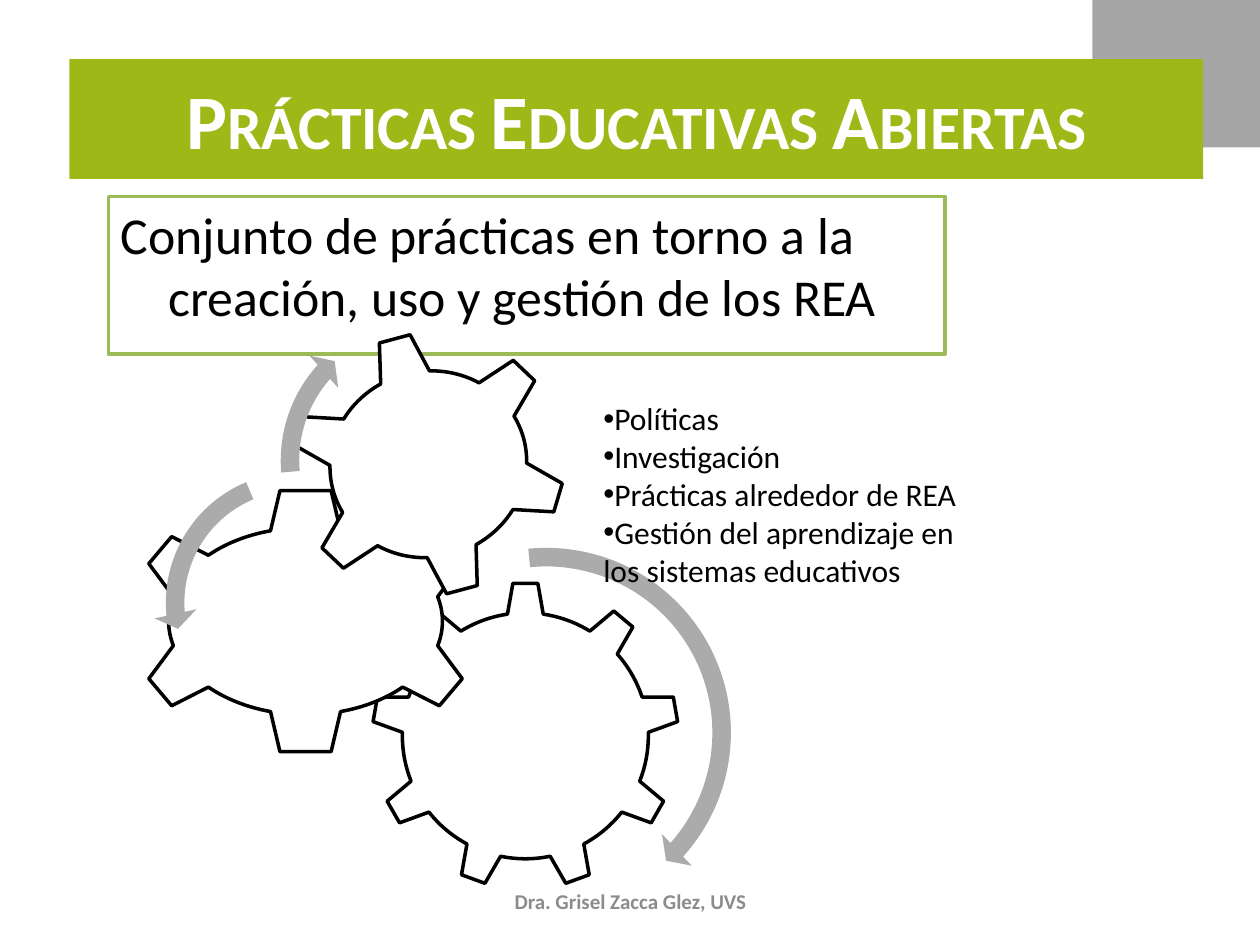
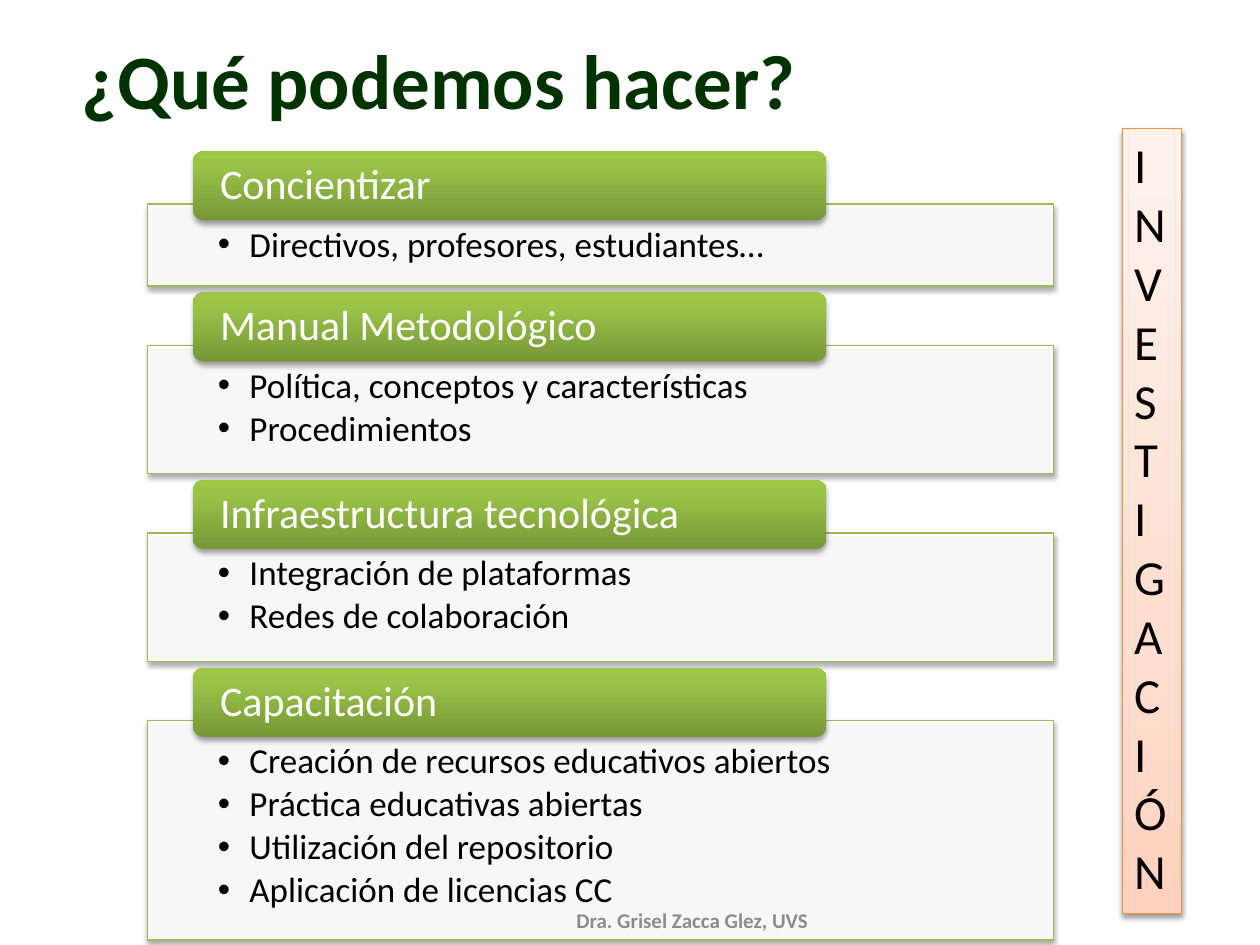
from dataclasses import dataclass, field
from typing import Any, NamedTuple

from lxml.etree import SubElement
from pptx import Presentation
from pptx.dml.color import RGBColor
from pptx.enum.shapes import MSO_SHAPE
from pptx.enum.text import MSO_ANCHOR, PP_ALIGN
from pptx.oxml.ns import qn
from pptx.util import Inches, Pt

FONT = "Calibri"
WHITE = RGBColor(0xFF, 0xFF, 0xFF)
BLACK = RGBColor(0x00, 0x00, 0x00)
DARK_GREEN = RGBColor(0x00, 0x33, 0x00)
BAND_GREEN = RGBColor(0x9E, 0xB9, 0x17)
LINE_GREEN = RGBColor(0x9B, 0xBB, 0x59)
LINE_ORANGE = RGBColor(0xF6, 0x92, 0x40)
CORNER_GRAY = RGBColor(0xA6, 0xA6, 0xA6)
ARROW_GRAY = RGBColor(0xAB, 0xAB, 0xAB)
FOOTER_GRAY = RGBColor(0x8C, 0x8C, 0x8C)
GREEN_STOPS = (
    (0, RGBColor(0x77, 0x97, 0x37)),
    (80, RGBColor(0x9B, 0xC3, 0x48)),
    (100, RGBColor(0x9D, 0xC7, 0x46)),
)
PEACH_STOPS = (
    (0, RGBColor(0xFF, 0xD2, 0xBD)),
    (35, RGBColor(0xFF, 0xDE, 0xD0)),
    (100, RGBColor(0xFF, 0xF2, 0xED)),
)


class Box(NamedTuple):
    left: float
    top: float
    width: float
    height: float

    def lengths(self) -> list:
        return [Inches(value) for value in self]


@dataclass
class TextStyle:
    size: float
    color: RGBColor = BLACK
    bold: bool = False
    small_caps: bool = False
    bullet: bool = False
    indent: float = 0
    anchor: Any = MSO_ANCHOR.TOP
    margins: tuple = (0.1, 0.05, 0.1, 0.05)
    paragraph: dict = field(default_factory=dict)


@dataclass
class Look:
    fill: Any = None
    opacity: int = 100
    stops: tuple = ()
    line: Any = None
    line_width: float = 0.75
    shadow_opacity: int = 0
    shadow_distance: float = 1.8


class Figure(NamedTuple):
    kind: Any
    box: Box
    look: Look
    rotation: float = 0
    adjustments: tuple = ()


class Action(NamedTuple):
    heading: str
    items: tuple
    height: float


CENTERED = {"alignment": PP_ALIGN.CENTER}
TITLE = TextStyle(44, DARK_GREEN, bold=True, anchor=MSO_ANCHOR.MIDDLE)
BAND_TITLE = TextStyle(44, WHITE, bold=True, small_caps=True, anchor=MSO_ANCHOR.MIDDLE, paragraph=CENTERED)
FOOTER = TextStyle(12, FOOTER_GRAY, bold=True, anchor=MSO_ANCHOR.MIDDLE, paragraph=CENTERED)
DEFINITION = TextStyle(29.6, indent=0.38)
TOPICS = TextStyle(18, bullet=True)
HEADING = TextStyle(24, WHITE, anchor=MSO_ANCHOR.MIDDLE, margins=(0.19, 0, 0.19, 0),
                    paragraph={"line_spacing": 0.9})
DETAILS = TextStyle(20, bullet=True, indent=0.25, margins=(0.56, 0.18, 0.56, 0.16),
                    paragraph={"line_spacing": 0.9, "space_after": Pt(3)})
RESEARCH = TextStyle(28)

GEAR_LOOK = Look(WHITE, line=BLACK, line_width=2)
ARROW_LOOK = Look(ARROW_GRAY)
PANEL_LOOK = Look(WHITE, opacity=90, line=LINE_GREEN, shadow_opacity=35)
HEADING_LOOK = Look(stops=GREEN_STOPS, shadow_opacity=35)
RESEARCH_LOOK = Look(stops=PEACH_STOPS, line=LINE_ORANGE, shadow_opacity=38, shadow_distance=1.6)

FIGURES = (
    Figure(MSO_SHAPE.GEAR_9, Box(2.95, 4.62, 2.44, 2.44), GEAR_LOOK),
    Figure(MSO_SHAPE.GEAR_6, Box(1.02, 3.87, 2.81, 2.12), GEAR_LOOK),
    Figure(MSO_SHAPE.GEAR_6, Box(2.3, 2.63, 2.2, 2.11), GEAR_LOOK, rotation=345),
    Figure(MSO_SHAPE.CIRCULAR_ARROW, Box(2.77, 4.25, 3.13, 3.13), ARROW_LOOK,
           adjustments=(0.047, 2.99, 25.131, 158.679, 0.055)),
    Figure(MSO_SHAPE.LEFT_CIRCULAR_ARROW, Box(1.22, 3.65, 2.27, 2.27), ARROW_LOOK,
           adjustments=(0.065, 4.3, 104.891, 148.378, 0.075)),
    Figure(MSO_SHAPE.CIRCULAR_ARROW, Box(2.13, 2.43, 2.45, 2.45), ARROW_LOOK,
           adjustments=(0.06, 3.941, 133.138, 105.082, 0.07)),
)
ACTIONS = (
    Action("Concientizar", ("Directivos, profesores, estudiantes…",), 0.65),
    Action("Manual Metodológico", ("Política, conceptos y características", "Procedimientos"), 1.02),
    Action("Infraestructura tecnológica", ("Integración de plataformas", "Redes de colaboración"), 1.02),
    Action("Capacitación", (
        "Creación de recursos educativos abiertos",
        "Práctica educativas abiertas",
        "Utilización del repositorio",
        "Aplicación de licencias CC",
    ), 1.74),
)


def set_values(target: Any, values: dict) -> None:
    for name, value in values.items():
        setattr(target, name, value)


def write_text(shape: Any, lines: tuple, style: TextStyle) -> None:
    frame = shape.text_frame
    left, top, right, bottom = (Inches(margin) for margin in style.margins)
    set_values(frame, {
        "text": "\n".join(lines), "word_wrap": True, "vertical_anchor": style.anchor,
        "margin_left": left, "margin_top": top, "margin_right": right, "margin_bottom": bottom,
    })
    for paragraph in frame.paragraphs:
        set_values(paragraph, {"alignment": PP_ALIGN.LEFT, **style.paragraph})
        properties = paragraph._p.get_or_add_pPr()
        if style.indent:
            properties.set("marL", str(Inches(style.indent)))
            properties.set("indent", str(-Inches(style.indent)))
        if style.bullet:
            SubElement(properties, qn("a:buFont")).set("typeface", "Arial")
            SubElement(properties, qn("a:buChar")).set("char", "•")
        for run in paragraph.runs:
            set_values(run.font, {"name": FONT, "size": Pt(style.size), "bold": style.bold})
            run.font.color.rgb = style.color
            if style.small_caps:
                run._r.get_or_add_rPr().set("cap", "small")


def add_text(slide: Any, box: Box, lines: tuple, style: TextStyle) -> None:
    write_text(slide.shapes.add_textbox(*box.lengths()), lines, style)


def add_color(parent: Any, color: RGBColor, opacity: int = 100) -> None:
    element = SubElement(parent, qn("a:srgbClr"), val=str(color))
    if opacity < 100:
        SubElement(element, qn("a:alpha"), val=str(opacity * 1000))


def apply_fill(shape: Any, look: Look) -> None:
    if look.stops:
        shape.fill.gradient()
        shape.fill.gradient_angle = 90
        stop_list = shape._element.spPr.find(qn("a:gradFill")).find(qn("a:gsLst"))
        for stop in list(stop_list):
            stop_list.remove(stop)
        for position, color in look.stops:
            add_color(SubElement(stop_list, qn("a:gs"), pos=str(position * 1000)), color)
        return
    shape.fill.solid()
    shape.fill.fore_color.rgb = look.fill
    if look.opacity < 100:
        solid = shape._element.spPr.find(qn("a:solidFill"))
        solid.remove(solid[0])
        add_color(solid, look.fill, look.opacity)


def add_figure(slide: Any, figure: Figure) -> Any:
    look = figure.look
    shape = slide.shapes.add_shape(figure.kind, *figure.box.lengths())
    shape.rotation = figure.rotation
    for index, value in enumerate(figure.adjustments):
        shape.adjustments[index] = value
    apply_fill(shape, look)
    if look.line is None:
        shape.line.fill.background()
    else:
        shape.line.color.rgb = look.line
        shape.line.width = Pt(look.line_width)
    shape.shadow.inherit = False
    if look.shadow_opacity:
        effects = shape._element.spPr.find(qn("a:effectLst"))
        shadow = SubElement(effects, qn("a:outerShdw"), blurRad=str(Pt(3.1)),
                            dist=str(Pt(look.shadow_distance)), dir="5400000", rotWithShape="0")
        add_color(shadow, BLACK, look.shadow_opacity)
    return shape


def add_rectangle(slide: Any, box: Box, look: Look) -> Any:
    return add_figure(slide, Figure(MSO_SHAPE.RECTANGLE, box, look))


def add_footer(slide: Any, left: float, top: float) -> None:
    add_text(slide, Box(left, top, 3.17, 0.4), ("Dra. Grisel Zacca Glez, UVS",), FOOTER)


def build_practices(slide: Any) -> None:
    definition = add_rectangle(slide, Box(0.86, 1.56, 6.64, 1.25), Look(WHITE, line=LINE_GREEN, line_width=2))
    write_text(definition, ("Conjunto de prácticas en torno a la creación, uso y gestión de los REA",), DEFINITION)
    for figure in FIGURES:
        add_figure(slide, figure)
    add_text(slide, Box(4.69, 3.12, 3.2, 1.92), (
        "Políticas",
        "Investigación",
        "Prácticas alrededor de REA",
        "Gestión del aprendizaje en los sistemas educativos",
    ), TOPICS)
    add_rectangle(slide, Box(8.67, 0, 1.33, 1.17), Look(CORNER_GRAY))
    band = add_rectangle(slide, Box(0.55, 0.47, 9, 0.95), Look(BAND_GREEN))
    write_text(band, ("Prácticas Educativas Abiertas",), BAND_TITLE)
    add_footer(slide, 3.42, 6.95)


def build_actions(slide: Any) -> None:
    add_text(slide, Box(0.55, 0, 9, 1.25), ("¿Qué podemos hacer?",), TITLE)
    heading_top = 1.2
    for action in ACTIONS:
        panel_box = Box(1.17, heading_top + 0.42, 7.19, action.height)
        write_text(add_rectangle(slide, panel_box, PANEL_LOOK), action.items, DETAILS)
        heading_box = Box(1.53, heading_top, 5.03, 0.55)
        heading = add_figure(slide, Figure(MSO_SHAPE.ROUNDED_RECTANGLE, heading_box, HEADING_LOOK))
        write_text(heading, (action.heading,), HEADING)
        heading_top = panel_box.top + panel_box.height + 0.05
    research = add_rectangle(slide, Box(8.91, 1.02, 0.47, 6.23), RESEARCH_LOOK)
    write_text(research, ("INVESTIGACIÓN",), RESEARCH)
    add_footer(slide, 3.91, 7.1)


def main() -> None:
    presentation = Presentation()
    set_values(presentation, {"slide_width": Inches(10), "slide_height": Inches(7.5)})
    for build in (build_practices, build_actions):
        build(presentation.slides.add_slide(presentation.slide_layouts[6]))
    presentation.save("out.pptx")


if __name__ == "__main__":
    main()
